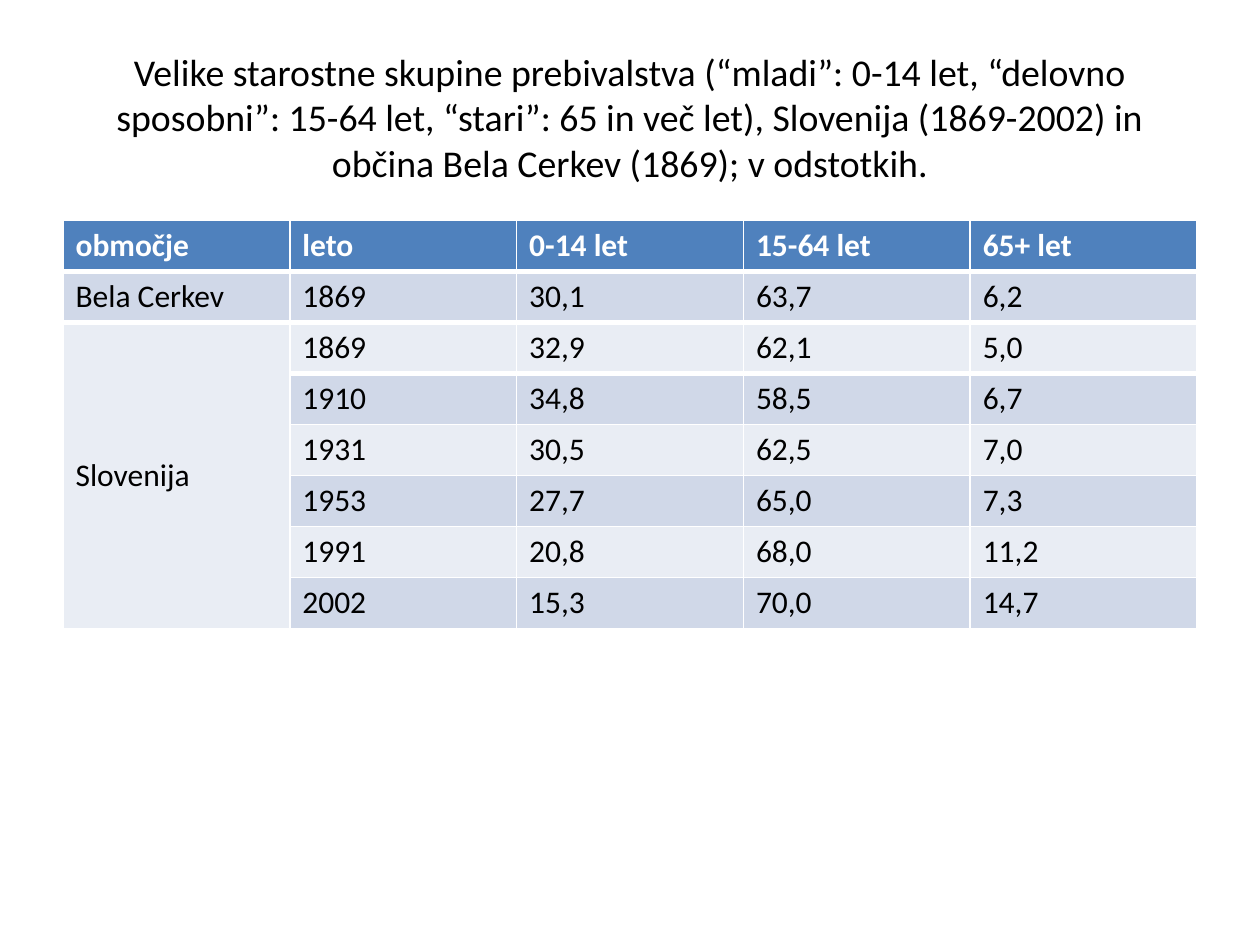
from dataclasses import dataclass

from lxml.etree import SubElement
from pptx import Presentation
from pptx.dml.color import RGBColor
from pptx.enum.text import MSO_ANCHOR, PP_ALIGN
from pptx.oxml.ns import qn
from pptx.util import Inches, Pt


@dataclass(frozen=True)
class Theme:
    font: str = "Calibri"
    title_size: float = 21.6
    table_size: float = 18
    text: str = "000000"
    white: str = "FFFFFF"
    header: str = "4F81BD"
    dark_band: str = "D0D8E8"
    light_band: str = "E9EDF4"
    thin: float = 1
    thick: float = 3


@dataclass(frozen=True)
class AgeShares:
    area: str
    year: str
    young: str
    working: str
    old: str

    def texts(self) -> tuple[str, ...]:
        return self.area, self.year, self.young, self.working, self.old


THEME = Theme()
TITLE = (
    "Velike starostne skupine prebivalstva (“mladi”: 0-14 let, “delovno sposobni”: "
    "15-64 let, “stari”: 65 in več let), Slovenija (1869-2002) in občina Bela Cerkev "
    "(1869); v odstotkih."
)
HEADINGS = ("območje", "leto", "0-14 let", "15-64 let", "65+ let")
SHARES = (
    AgeShares("Bela Cerkev", "1869", "30,1", "63,7", "6,2"),
    AgeShares("Slovenija", "1869", "32,9", "62,1", "5,0"),
    AgeShares("", "1910", "34,8", "58,5", "6,7"),
    AgeShares("", "1931", "30,5", "62,5", "7,0"),
    AgeShares("", "1953", "27,7", "65,0", "7,3"),
    AgeShares("", "1991", "20,8", "68,0", "11,2"),
    AgeShares("", "2002", "15,3", "70,0", "14,7"),
)
SLOVENIA_ROW = 2
MARGIN = Inches(0.5)
CONTENT_WIDTH = Inches(9)
TABLE_HEIGHT = Inches(3.24)


def style_paragraph(paragraph, size: float, color: str, bold: bool = False) -> None:
    font = paragraph.font
    font.name = THEME.font
    font.size = Pt(size)
    font.bold = bold
    font.color.rgb = RGBColor.from_string(color)


def add_title(slide) -> None:
    frame = slide.shapes.add_textbox(
        MARGIN, Inches(0.3), CONTENT_WIDTH, Inches(1.25)
    ).text_frame
    frame.word_wrap = True
    frame.vertical_anchor = MSO_ANCHOR.MIDDLE
    frame.text = TITLE
    paragraph = frame.paragraphs[0]
    paragraph.alignment = PP_ALIGN.CENTER
    style_paragraph(paragraph, THEME.title_size, THEME.text)


def set_borders(cell, top: float, bottom: float) -> None:
    """Draw white borders; call before filling, as the schema puts lines first."""
    properties = cell._tc.get_or_add_tcPr()
    widths = {"a:lnL": THEME.thin, "a:lnR": THEME.thin, "a:lnT": top, "a:lnB": bottom}
    for tag, width in widths.items():
        line = SubElement(properties, qn(tag), w=str(Pt(width)))
        fill = SubElement(line, qn("a:solidFill"))
        SubElement(fill, qn("a:srgbClr"), val=THEME.white)


def row_fill(row: int) -> str:
    if row == 0:
        return THEME.header
    return THEME.dark_band if row % 2 else THEME.light_band


def rule_below(row: int, column: int) -> float:
    """The rule under the first Slovenian row leaves out the merged area cell."""
    last_thick_row = SLOVENIA_ROW if column else SLOVENIA_ROW - 1
    return THEME.thick if 0 <= row <= last_thick_row else THEME.thin


def add_age_table(slide) -> None:
    rows = (HEADINGS, *(shares.texts() for shares in SHARES))
    table = slide.shapes.add_table(
        len(rows), len(HEADINGS), MARGIN, Inches(1.75), CONTENT_WIDTH, TABLE_HEIGHT
    ).table
    for row, texts in enumerate(rows):
        is_header = row == 0
        for column, text in enumerate(texts):
            cell = table.cell(row, column)
            cell.text = text
            style_paragraph(
                cell.text_frame.paragraphs[0],
                THEME.table_size,
                THEME.white if is_header else THEME.text,
                is_header,
            )
            set_borders(cell, rule_below(row - 1, column), rule_below(row, column))
            cell.fill.solid()
            cell.fill.fore_color.rgb = RGBColor.from_string(row_fill(row))
    slovenia = table.cell(SLOVENIA_ROW, 0)
    slovenia.merge(table.cell(len(rows) - 1, 0))
    slovenia.vertical_anchor = MSO_ANCHOR.MIDDLE


def main() -> None:
    presentation = Presentation()
    presentation.slide_width = Inches(10)
    presentation.slide_height = Inches(7.5)
    slide = presentation.slides.add_slide(presentation.slide_layouts[6])
    add_title(slide)
    add_age_table(slide)
    presentation.save("out.pptx")


if __name__ == "__main__":
    main()
